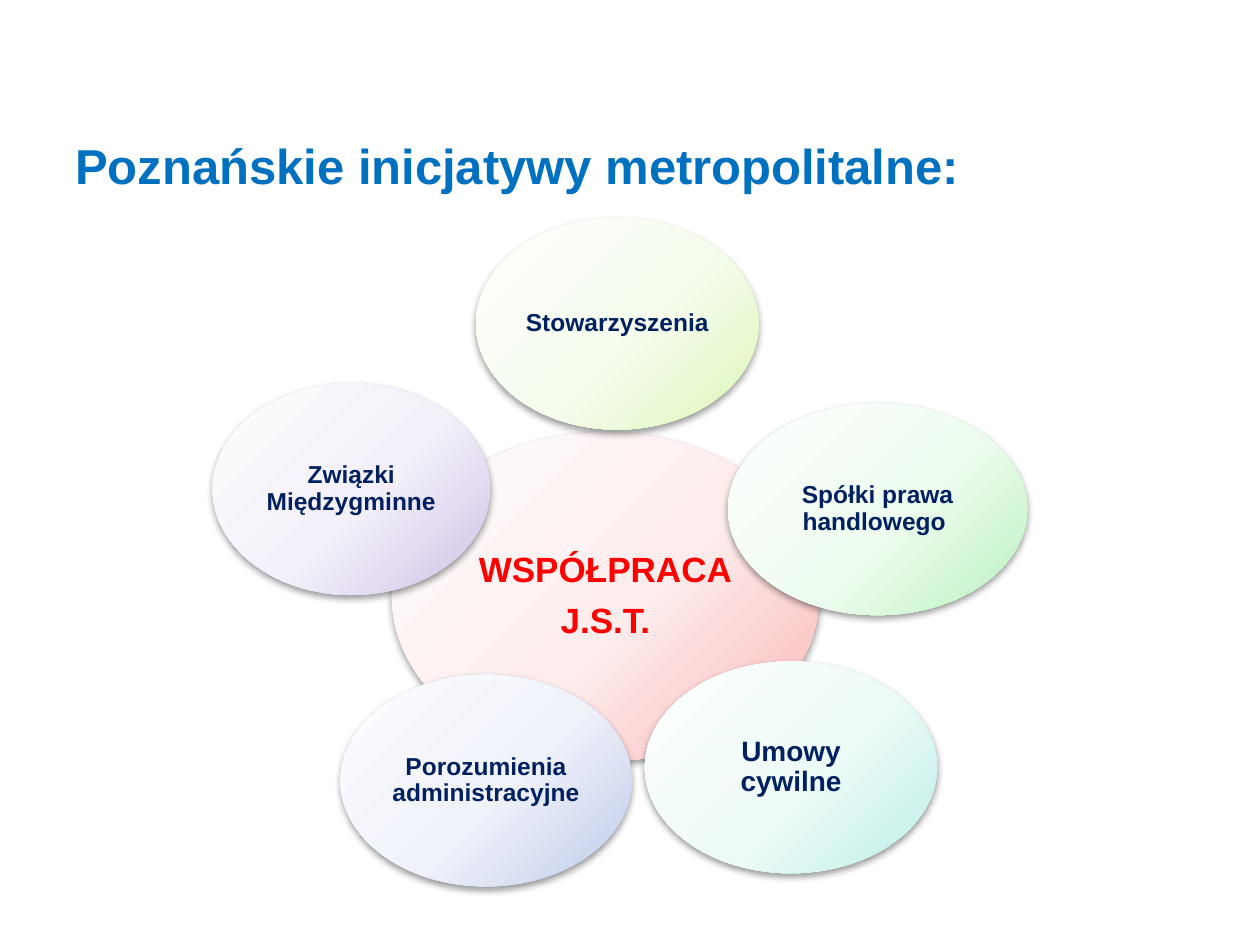
"""Builds the slide on Poznań's metropolitan initiatives."""
from lxml import etree
from pptx import Presentation
from pptx.dml.color import RGBColor
from pptx.enum.shapes import MSO_SHAPE
from pptx.enum.text import MSO_ANCHOR, PP_ALIGN
from pptx.oxml import parse_xml
from pptx.oxml.ns import nsdecls, qn
from pptx.util import Pt

ELLIPSE = MSO_SHAPE.OVAL
MIDDLE, TOP = MSO_ANCHOR.MIDDLE, MSO_ANCHOR.TOP
CENTER, LEFT = PP_ALIGN.CENTER, PP_ALIGN.LEFT

BLUE = RGBColor(0x00, 0x70, 0xC0)
NAVY = RGBColor(0x00, 0x20, 0x60)
RED = RGBColor(0xFF, 0x00, 0x00)
ROSE = (RGBColor(0xFF, 0xFE, 0xFE), RGBColor(0xFD, 0xED, 0xED), RGBColor(0xFB, 0xB5, 0xB4))
LIME = (RGBColor(0xFE, 0xFF, 0xFE), RGBColor(0xF6, 0xFC, 0xEE), RGBColor(0xDD, 0xF6, 0xB8))
GREEN = (RGBColor(0xFE, 0xFF, 0xFE), RGBColor(0xEF, 0xFC, 0xF0), RGBColor(0xBA, 0xF2, 0xBE))
TEAL = (RGBColor(0xFE, 0xFF, 0xFE), RGBColor(0xEF, 0xFB, 0xF9), RGBColor(0xBD, 0xEF, 0xE7))
PERIWINKLE = (RGBColor(0xFE, 0xFE, 0xFF), RGBColor(0xF0, 0xF2, 0xFA), RGBColor(0xBF, 0xCA, 0xEB))
VIOLET = (RGBColor(0xFE, 0xFE, 0xFE), RGBColor(0xF3, 0xF0, 0xF9), RGBColor(0xD0, 0xC1, 0xE7))

STOPS = (0, 55000, 100000)
SATELLITE_HEIGHT = 121
SATELLITES = (
    ("Stowarzyszenia", 272, 124.5, 161.5, LIME, 14),
    ("Spółki prawa handlowego ", 416, 230.5, 171, GREEN, 14),
    ("Umowy cywilne", 368.5, 378, 167, TEAL, 16),
    ("Porozumienia administracyjne", 194.5, 385.5, 166.5, PERIWINKLE, 14),
    ("Związki Międzygminne", 121.5, 219, 158.5, VIOLET, 14),
)


def write(frame, text, *, font, size, color, align, anchor, margins, spacing=1.0, after=0):
    """Fill a text frame with one bold paragraph per line of text."""
    frame.word_wrap = True
    frame.vertical_anchor = anchor
    frame.margin_left = frame.margin_right = Pt(margins[0])
    frame.margin_top = frame.margin_bottom = Pt(margins[1])
    for index, line in enumerate(text.split("\n")):
        para = frame.add_paragraph() if index else frame.paragraphs[0]
        para.alignment = align
        para.line_spacing = spacing
        para.space_after = Pt(after)
        span = para.add_run()
        span.text = line
        span.font.name = font
        span.font.size = Pt(size)
        span.font.bold = True
        span.font.color.rgb = color


class Painter:
    """Holds the style and the current slide."""

    def __init__(self, page, font="Arial"):
        """Keep the slide and the font used on it."""
        self.page = page
        self.font = font

    def title(self, text, left, top, width, height):
        """Add the slide heading."""
        box = self.page.shapes.add_textbox(Pt(left), Pt(top), Pt(width), Pt(height))
        write(box.text_frame, text, font=self.font, size=28, color=BLUE,
              align=LEFT, anchor=TOP, margins=(7.2, 3.6))

    def bubble(self, text, left, top, width, height, shades, size, color=NAVY):
        """Add a shaded ellipse with centred text."""
        shape = self.page.shapes.add_shape(ELLIPSE, Pt(left), Pt(top), Pt(width), Pt(height))
        shape.line.fill.background()
        self.shade(shape, shades)
        self.cast_shadow(shape)
        write(shape.text_frame, text, font=self.font, size=size, color=color,
              align=CENTER, anchor=MIDDLE, margins=(1.5, 1.5), spacing=0.9, after=8)

    def shade(self, shape, shades):
        """Give a shape a circular gradient centred outside its top left."""
        shape.fill.background()
        properties = shape._element.spPr
        gradient = parse_xml(
            f'<a:gradFill {nsdecls("a")} rotWithShape="1"><a:gsLst/><a:path path="circle">'
            '<a:fillToRect l="-40000" t="-90000" r="140000" b="190000"/></a:path></a:gradFill>')
        for position, shade in zip(STOPS, shades):
            stop = etree.SubElement(gradient[0], qn("a:gs"), pos=str(position))
            etree.SubElement(stop, qn("a:srgbClr"), val=str(shade))
        properties.replace(properties.find(qn("a:noFill")), gradient)

    def cast_shadow(self, shape):
        """Give a shape a soft shadow below it."""
        shape.shadow.inherit = False
        effects = shape._element.spPr.find(qn("a:effectLst"))
        effects.append(parse_xml(
            f'<a:outerShdw {nsdecls("a")} blurRad="{Pt(4.1)}" dist="{Pt(2)}" dir="5400000" '
            'rotWithShape="0"><a:srgbClr val="000000"><a:alpha val="40000"/></a:srgbClr>'
            '</a:outerShdw>'))


def main():
    """Build and save the deck."""
    deck = Presentation()
    deck.slide_width, deck.slide_height = Pt(720), Pt(540)
    painter = Painter(deck.slides.add_slide(deck.slide_layouts[6]))
    painter.title("Poznańskie inicjatywy metropolitalne:", 36, 74, 648, 70)
    painter.bubble("WSPÓŁPRACA\nJ.S.T.", 224, 247, 244, 188, ROSE, 20, RED)
    for text, left, top, width, shades, size in SATELLITES:
        painter.bubble(text, left, top, width, SATELLITE_HEIGHT, shades, size)
    deck.save("out.pptx")


if __name__ == "__main__":
    main()
